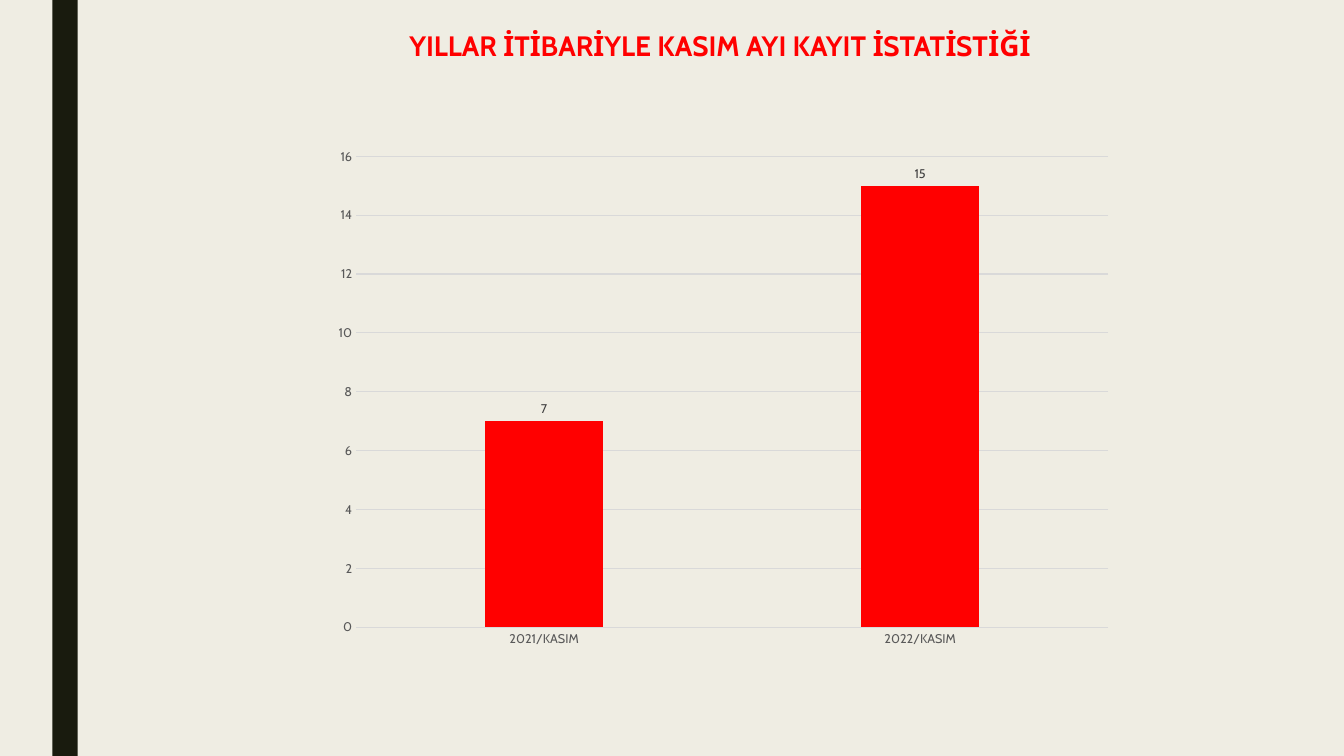
from lxml.etree import SubElement
from pptx import Presentation
from pptx.chart.data import CategoryChartData as ChartData
from pptx.dml.color import RGBColor as Rgb
from pptx.enum.chart import XL_CHART_TYPE as ChartType
from pptx.enum.chart import XL_LABEL_POSITION as LabelPosition
from pptx.enum.chart import XL_TICK_MARK as TickMark
from pptx.enum.shapes import MSO_SHAPE as Preset
from pptx.enum.text import MSO_ANCHOR as Anchor
from pptx.enum.text import PP_ALIGN as Align
from pptx.oxml.ns import qn
from pptx.util import Inches, Pt

COLORS = {
    "background": "EFEDE3",
    "stripe": "191B0E",
    "accent": "FF0000",
    "text": "000000",
    "axis": "595959",
    "label": "404040",
    "grid": "D9D9D9",
}


class SlideBuilder:
    font_name = "Cabin"

    def __init__(self, presentation):
        self.slide = presentation.slides.add_slide(presentation.slide_layouts[5])
        self.paint(self.slide.background.fill, "background")

    def paint(self, fill, color):
        fill.solid()
        fill.fore_color.rgb = Rgb.from_string(COLORS[color])

    def style_font(self, font, size, color, bold=False):
        font.name = self.font_name
        font.size = Pt(size)
        font.bold = bold
        font.color.rgb = Rgb.from_string(COLORS[color])

    def style_line(self, line):
        self.paint(line.fill, "grid")
        line.width = Pt(0.75)

    def stripe(self, left, top, width, height):
        band = self.slide.shapes.add_shape(
            Preset.RECTANGLE, *map(Inches, (left, top, width, height)))
        band.shadow.inherit = False
        self.paint(band.fill, "stripe")
        band.line.fill.background()

    def title(self, text, left, top, width, height):
        heading = self.slide.shapes.title
        heading.left, heading.top = Inches(left), Inches(top)
        heading.width, heading.height = Inches(width), Inches(height)
        frame = heading.text_frame
        frame.text = text
        frame.word_wrap = True
        frame.vertical_anchor = Anchor.TOP
        paragraph = frame.paragraphs[0]
        paragraph.alignment = Align.CENTER
        paragraph.line_spacing = 0.89
        self.style_font(paragraph.runs[0].font, 20, "accent", bold=True)

    def column_chart(self, name, counts, left, top, width, height):
        data = ChartData()
        data.categories = list(counts)
        data.add_series(name, list(counts.values()))
        chart = self.slide.shapes.add_chart(
            ChartType.COLUMN_CLUSTERED,
            *map(Inches, (left, top, width, height)), data).chart
        chart.has_legend = False
        chart.has_title = False
        self.style_font(chart.font, 10, "text")

        for axis in (chart.category_axis, chart.value_axis):
            axis.major_tick_mark = axis.minor_tick_mark = TickMark.NONE
            self.style_font(axis.tick_labels.font, 9, "axis")
        self.style_line(chart.category_axis.format.line)
        values = chart.value_axis
        values.minimum_scale, values.maximum_scale, values.major_unit = 0, 16, 2
        values.format.line.fill.background()
        self.style_line(values.major_gridlines.format.line)

        plot = chart.plots[0]
        plot.vary_by_categories = False
        plot.gap_width = 219
        plot.overlap = -27
        columns = plot.series[0]
        self.paint(columns.format.fill, "accent")
        labels = columns.data_labels
        labels.show_value = True
        labels.position = LabelPosition.OUTSIDE_END
        self.style_font(labels.font, 9, "label")


def main():
    presentation = Presentation()
    presentation.slide_width = Inches(13.33)
    presentation.slide_height = Inches(7.5)
    builder = SlideBuilder(presentation)
    builder.stripe(0.52, 0, 0.25, 7.5)
    builder.title("YILLAR İTİBARİYLE KASIM AYI KAYIT İSTATİSTİĞİ", 3.36, 0.27, 7.56, 0.69)
    builder.column_chart(
        "Series 1", {"2021/KASIM": 7, "2022/KASIM": 15}, 3.2, 1.37, 7.95, 5.15)
    presentation.save("out.pptx")


if __name__ == "__main__":
    main()
